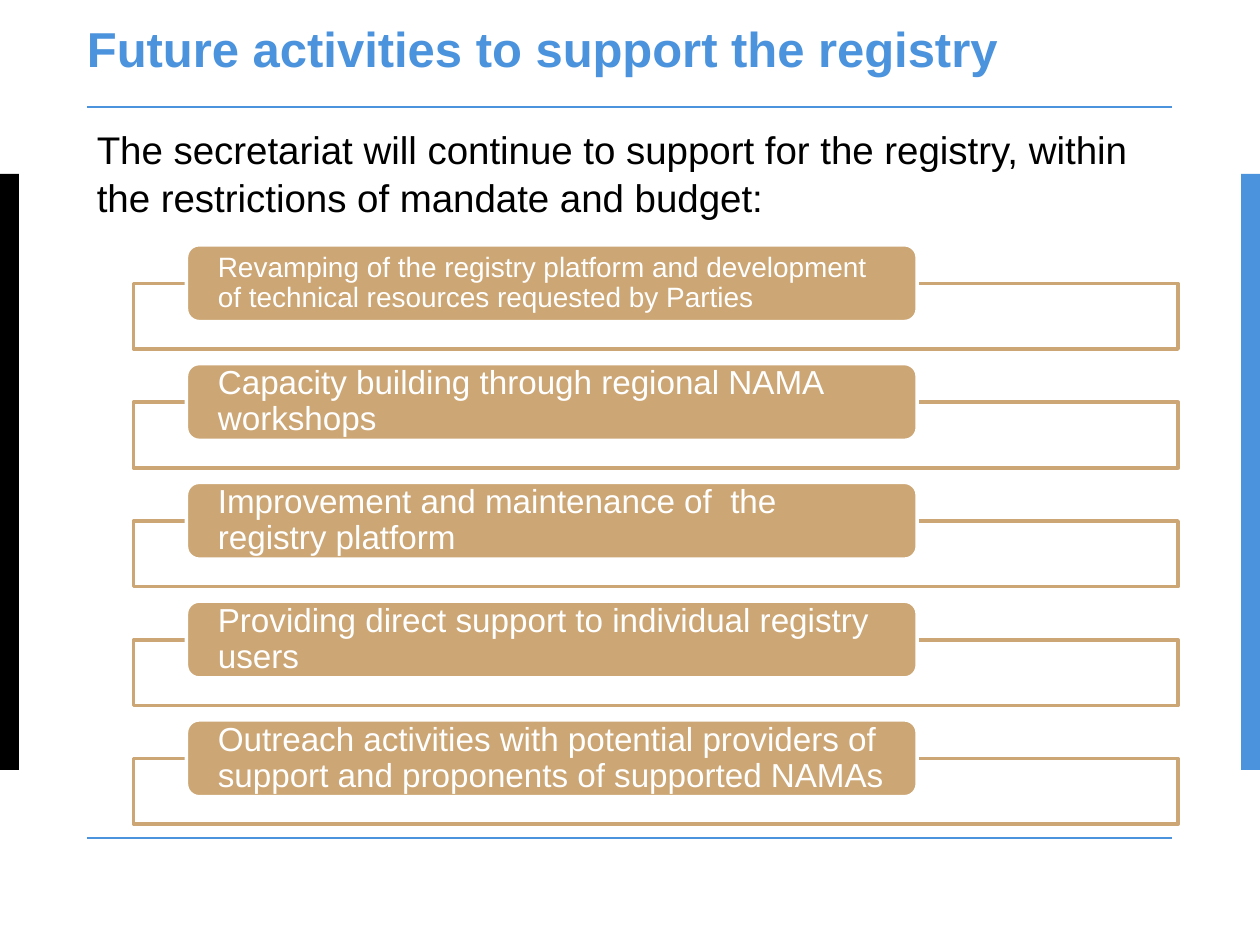
from dataclasses import dataclass
from lxml.etree import SubElement
from pptx import Presentation
from pptx.dml.color import RGBColor
from pptx.enum.shapes import MSO_CONNECTOR as Connector, MSO_SHAPE as Shape
from pptx.enum.text import MSO_ANCHOR as Anchor, PP_ALIGN as Align
from pptx.oxml.ns import qn
from pptx.util import Inches, Pt


@dataclass(frozen=True)
class Theme:
    font: str = "Arial"
    blue: RGBColor = RGBColor(0x4B, 0x93, 0xDC)
    tan: RGBColor = RGBColor(0xCC, 0xA6, 0x74)
    black: RGBColor = RGBColor(0, 0, 0)
    white: RGBColor = RGBColor(255, 255, 255)
    title_size: int = 28
    intro_size: int = 22
    activity_size: int = 19
    long_activity_size: int = 16


theme = Theme()
presentation = Presentation()
presentation.slide_width = Inches(10)
presentation.slide_height = Inches(7.5)
slide = presentation.slides.add_slide(presentation.slide_layouts[6])
column = presentation.slide_width / 100
row = presentation.slide_height / 100


def write_text(shape, text, size, color, bold=False, anchor=Anchor.MIDDLE,
               insets=(0, 0), spacing=1.0):
    frame = shape.text_frame
    frame.word_wrap = True
    frame.vertical_anchor = anchor
    frame.margin_left = frame.margin_right = Inches(insets[0])
    frame.margin_top = frame.margin_bottom = Inches(insets[1])
    paragraph = frame.paragraphs[0]
    paragraph.alignment = Align.LEFT
    paragraph.line_spacing = spacing
    run = paragraph.add_run()
    run.text = text
    run.font.name = theme.font
    run.font.size = Pt(size)
    run.font.bold = bold
    run.font.color.rgb = color


def add_box(kind, left, top, width, height, fill, line=None):
    shape = slide.shapes.add_shape(kind, int(left * column), int(top * row),
                                   int(width * column), int(height * row))
    shape.shadow.inherit = False
    shape.fill.solid()
    shape.fill.fore_color.rgb = fill
    if line is None:
        shape.line.fill.background()
    else:
        shape.line.color.rgb = line
        shape.line.width = Pt(2)
    return shape


for left, color in ((0, theme.black), (98.5, theme.blue)):
    add_box(Shape.RECTANGLE, left, 18.4, 1.5, 63.07, color)

for top in (11.33, 88.67):
    rule = slide.shapes.add_connector(Connector.STRAIGHT, int(6.9 * column), int(top * row),
                                      int(93 * column), int(top * row))
    rule.line.color.rgb = theme.blue
    rule.line.width = Pt(1)
    SubElement(rule.element.spPr, qn("a:effectLst"))

title = slide.shapes.add_textbox(int(6.9 * column), int(4.53 * row),
                                 int(86.1 * column), int(4.53 * row))
write_text(title, "Future activities to support the registry", theme.title_size,
           theme.blue, bold=True, spacing=Pt(15))

activities = [
    ("Revamping of the registry platform and development of technical resources "
     "requested by Parties", theme.long_activity_size),
    ("Capacity building through regional NAMA workshops", theme.activity_size),
    ("Improvement and maintenance of  the registry platform", theme.activity_size),
    ("Providing direct support to individual registry users", theme.activity_size),
    ("Outreach activities with potential providers of support and proponents of "
     "supported NAMAs", theme.activity_size),
]
pitch = 12.57
for index, (activity, size) in enumerate(activities):
    offset = index * pitch
    panel = add_box(Shape.RECTANGLE, 10.6, 30 + offset, 82.9, 6.95, theme.white, theme.tan)
    panel_color = panel.fill._xPr.find(qn("a:solidFill"))[0]
    SubElement(panel_color, qn("a:alpha"), val="90000")
    label = add_box(Shape.ROUNDED_RECTANGLE, 14.8, 25.9, 58, 8.13, theme.tan, theme.white)
    label.top = int((25.9 + offset) * row)
    write_text(label, activity, size, theme.white, insets=(0.22, 0), spacing=0.9)

intro = slide.shapes.add_textbox(int(6.7 * column), int(12.53 * row),
                                 int(86.6 * column), int(11.2 * row))
write_text(intro, "The secretariat will continue to support for the registry, within the "
           "restrictions of mandate and budget:", theme.intro_size, theme.black,
           anchor=Anchor.TOP, insets=(0.1, 0.05), spacing=1.04)

presentation.save("out.pptx")
